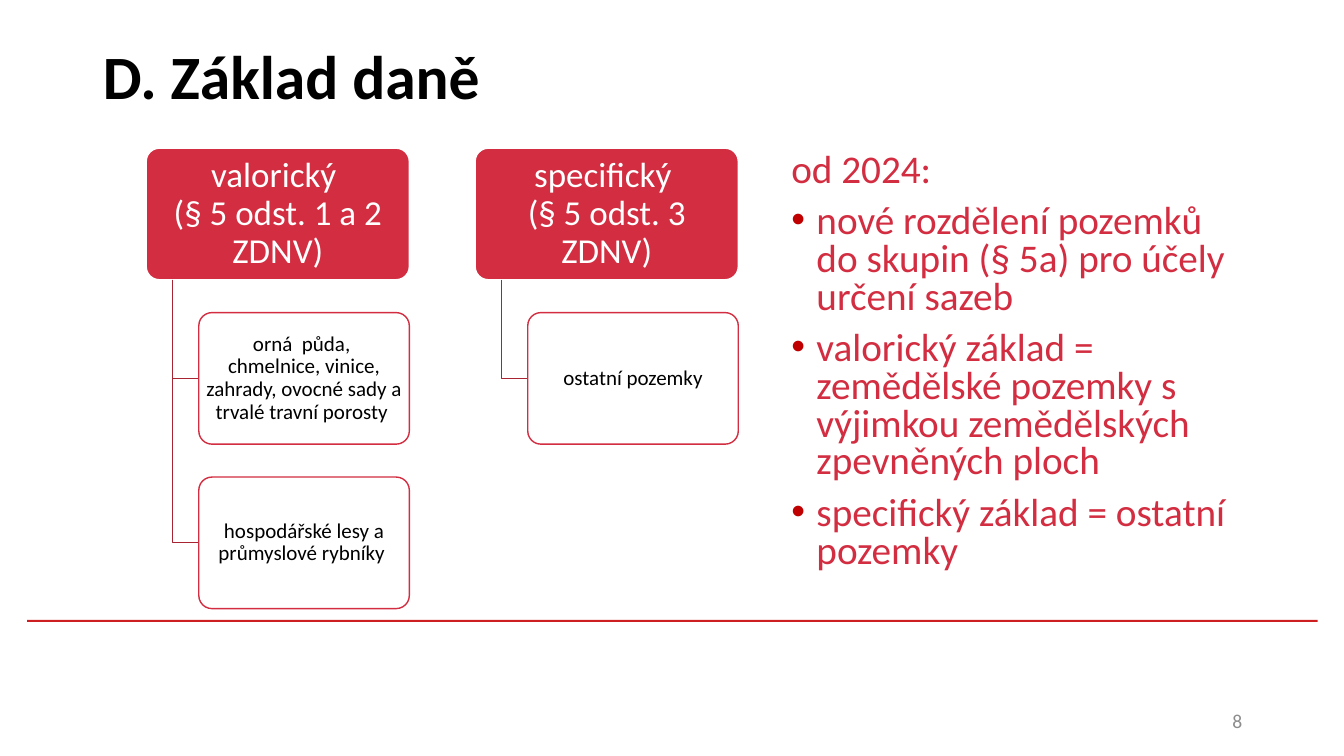
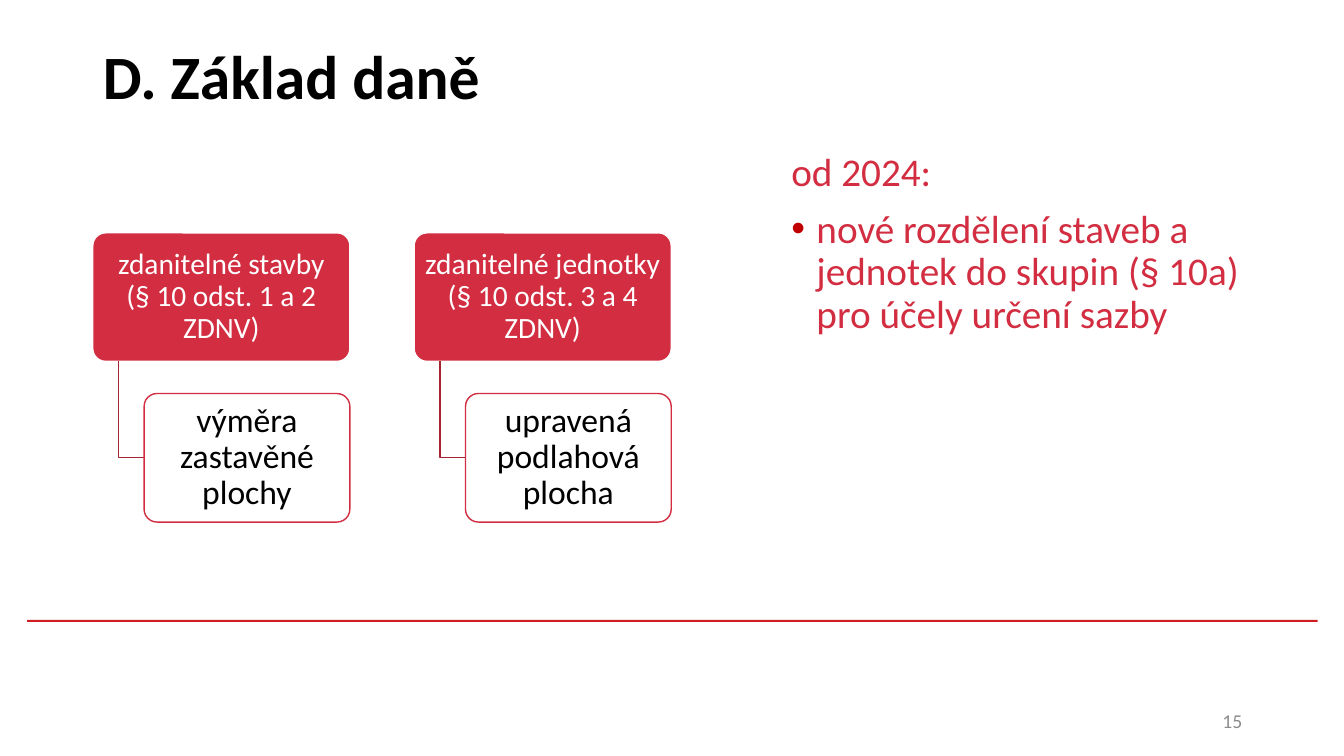
from dataclasses import dataclass

from lxml.etree import SubElement
from pptx import Presentation
from pptx.dml.color import RGBColor
from pptx.enum.shapes import MSO_SHAPE as Shape
from pptx.enum.text import MSO_ANCHOR as Anchor, PP_ALIGN as Align
from pptx.oxml.ns import qn
from pptx.util import Inches, Pt


@dataclass(frozen=True)
class Theme:
    font: str = "Calibri"
    black: str = "000000"
    white: str = "FFFFFF"
    red: str = "D22D40"
    branch: str = "A82433"
    rule: str = "CD1F21"
    bullet: str = "C00000"
    grey: str = "8C8C8C"
    title_size: int = 44
    note_size: int = 28
    number_size: int = 14


THEME = Theme()

# Content: each tree is a head text with its child texts
SLIDES = [
    {
        "title": "D. Základ daně",
        "number": "8",
        "trees": [
            ("valorický \v(§ 5 odst. 1 a 2 ZDNV)",
             ["orná  půda,  chmelnice, vinice, zahrady, ovocné sady a trvalé travní porosty ",
              "hospodářské lesy a průmyslové rybníky "]),
            ("specifický \v(§ 5 odst. 3 ZDNV)", ["ostatní pozemky"]),
        ],
        "tree_place": {"left": 1.45, "top": 1.47, "width": 2.61},
        "head_style": {"size": 25, "inset": 0.05},
        "child_style": {"size": 15, "inset": 0.03},
        "heading": "od 2024:",
        "notes": [
            "nové rozdělení pozemků do skupin (§ 5a) pro účely určení sazeb",
            "valorický základ = zemědělské pozemky s výjimkou zemědělských zpevněných ploch",
            "specifický základ = ostatní pozemky",
        ],
        "note_spacing": 0.8,
    },
    {
        "title": "D. Základ daně",
        "number": "15",
        "trees": [
            ("zdanitelné stavby\v(§ 10 odst. 1 a 2 ZDNV)", ["výměra zastavěné plochy"]),
            ("zdanitelné jednotky\v(§ 10 odst. 3 a 4 ZDNV)", ["upravená podlahová plocha"]),
        ],
        "tree_place": {"left": 0.92, "top": 2.31, "width": 2.55},
        "head_style": {"size": 21, "inset": 0.04},
        "child_style": {"size": 24, "inset": 0.05},
        "heading": "od 2024:",
        "notes": ["nové rozdělení staveb a jednotek do skupin (§ 10a) pro účely určení sazby"],
        "note_spacing": 0.9,
    },
]


def color(value):
    return RGBColor.from_string(value)


def format_text(para, size, ink, bold=False):
    for span in para.runs:
        span.font.name = THEME.font
        span.font.size = Pt(size)
        span.font.bold = bold
        span.font.color.rgb = color(ink)


def add_rule(page, layout):
    """Put the red rule on the layout, so that every slide shows it."""
    rule = page.shapes.add_shape(Shape.RECTANGLE, Inches(0.27), Inches(6.15),
                                 Inches(12.8), Inches(0.02))
    rule.shadow.inherit = False
    rule.fill.solid()
    rule.fill.fore_color.rgb = color(THEME.rule)
    rule.line.fill.background()
    layout.shapes.element.append(rule.element)


def add_title(page, text):
    title = page.shapes.title
    title.left, title.top = Inches(0.92), Inches(0.02)
    title.width, title.height = Inches(11.5), Inches(1.45)
    frame = title.text_frame
    frame.text = text
    frame.vertical_anchor = Anchor.MIDDLE
    frame.paragraphs[0].alignment = Align.LEFT
    format_text(frame.paragraphs[0], THEME.title_size, THEME.black, bold=True)


def add_number(page, number):
    box = page.shapes.add_textbox(Inches(9.42), Inches(6.95), Inches(3), Inches(0.4))
    frame = box.text_frame
    frame.word_wrap = True
    frame.vertical_anchor = Anchor.MIDDLE
    frame.text = number
    frame.paragraphs[0].alignment = Align.RIGHT
    format_text(frame.paragraphs[0], THEME.number_size, THEME.grey)


def add_card(page, text, left, top, width, height, fill, line, ink, size, inset):
    card = page.shapes.add_shape(Shape.ROUNDED_RECTANGLE, Inches(left), Inches(top),
                                 Inches(width), Inches(height))
    card.adjustments[0] = 0.1
    card.shadow.inherit = False
    card.fill.solid()
    card.fill.fore_color.rgb = color(fill)
    card.line.color.rgb = color(line)
    card.line.width = Pt(1)
    frame = card.text_frame
    frame.word_wrap = True
    frame.vertical_anchor = Anchor.MIDDLE
    frame.margin_left = frame.margin_right = Inches(inset)
    frame.margin_top = frame.margin_bottom = Inches(0.03)
    frame.text = text
    para = frame.paragraphs[0]
    para.alignment = Align.CENTER
    para.line_spacing = 0.9
    format_text(para, size, ink)


def add_branch(page, left, top, right, bottom):
    corner = (Inches(left), Inches(bottom))
    builder = page.shapes.build_freeform(Inches(left), Inches(top))
    builder.add_line_segments([corner, (Inches(right), Inches(bottom))], close=False)
    branch = builder.convert_to_shape()
    branch.shadow.inherit = False
    branch.fill.background()
    branch.line.color.rgb = color(THEME.branch)
    branch.line.width = Pt(1)


def add_trees(page, content):
    place = content["tree_place"]
    top, width = place["top"], place["width"]
    # All proportions follow from the width of a head card
    height, column_step = width / 2, width * 1.25
    row_step = height * 1.25
    for column, (head, children) in enumerate(content["trees"]):
        left = place["left"] + column * column_step
        child_left = left + width / 5
        add_card(page, head, left, top, width, height,
                 THEME.red, THEME.white, THEME.white, **content["head_style"])
        for row, child in enumerate(children, start=1):
            child_top = top + row * row_step
            add_branch(page, left + width / 10, top + height,
                       child_left, child_top + height / 2)
            add_card(page, child, child_left, child_top, width * 0.8, height,
                     THEME.white, THEME.red, THEME.black, **content["child_style"])


def add_bullet(para):
    props = para._p.get_or_add_pPr()
    props.set("marL", str(Inches(0.25)))
    props.set("indent", str(Inches(-0.25)))
    tint = SubElement(props, qn("a:buClr"))
    SubElement(tint, qn("a:srgbClr")).set("val", THEME.bullet)
    SubElement(props, qn("a:buFont")).set("typeface", "Arial")
    SubElement(props, qn("a:buChar")).set("char", "•")


def add_notes(page, content):
    box = page.shapes.add_textbox(Inches(7.75), Inches(1.47), Inches(4.67), Inches(4.57))
    frame = box.text_frame
    frame.word_wrap = True
    frame.text = "\n".join([content["heading"], *content["notes"]])
    for index, para in enumerate(frame.paragraphs):
        if index:
            add_bullet(para)
            para.space_before = Pt(10)
        para.line_spacing = content["note_spacing"]
        format_text(para, THEME.note_size, THEME.red)


def main():
    deck = Presentation()
    deck.slide_width, deck.slide_height = Inches(13.33), Inches(7.5)
    layout = deck.slide_layouts.get_by_name("Title Only")
    for index, content in enumerate(SLIDES):
        page = deck.slides.add_slide(layout)
        if index == 0:
            add_rule(page, layout)
        add_title(page, content["title"])
        add_number(page, content["number"])
        add_trees(page, content)
        add_notes(page, content)
    deck.save("out.pptx")


if __name__ == "__main__":
    main()
